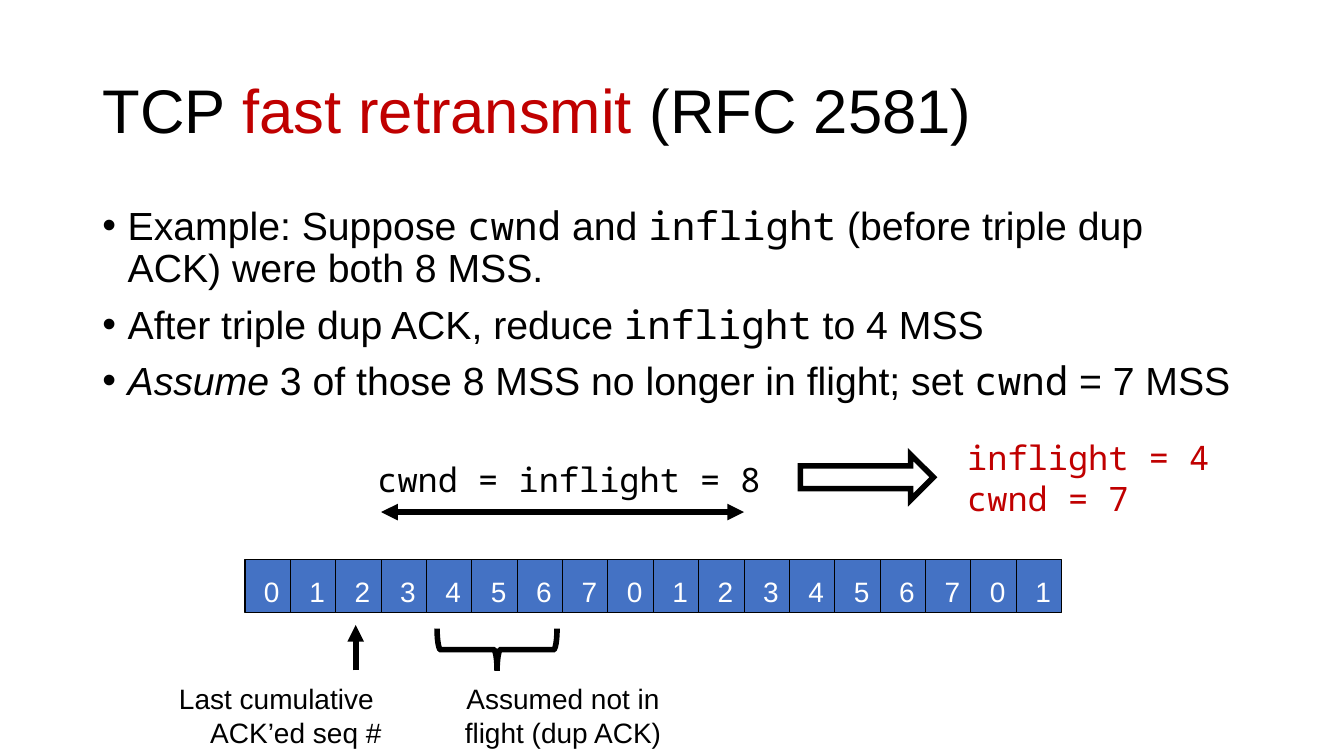
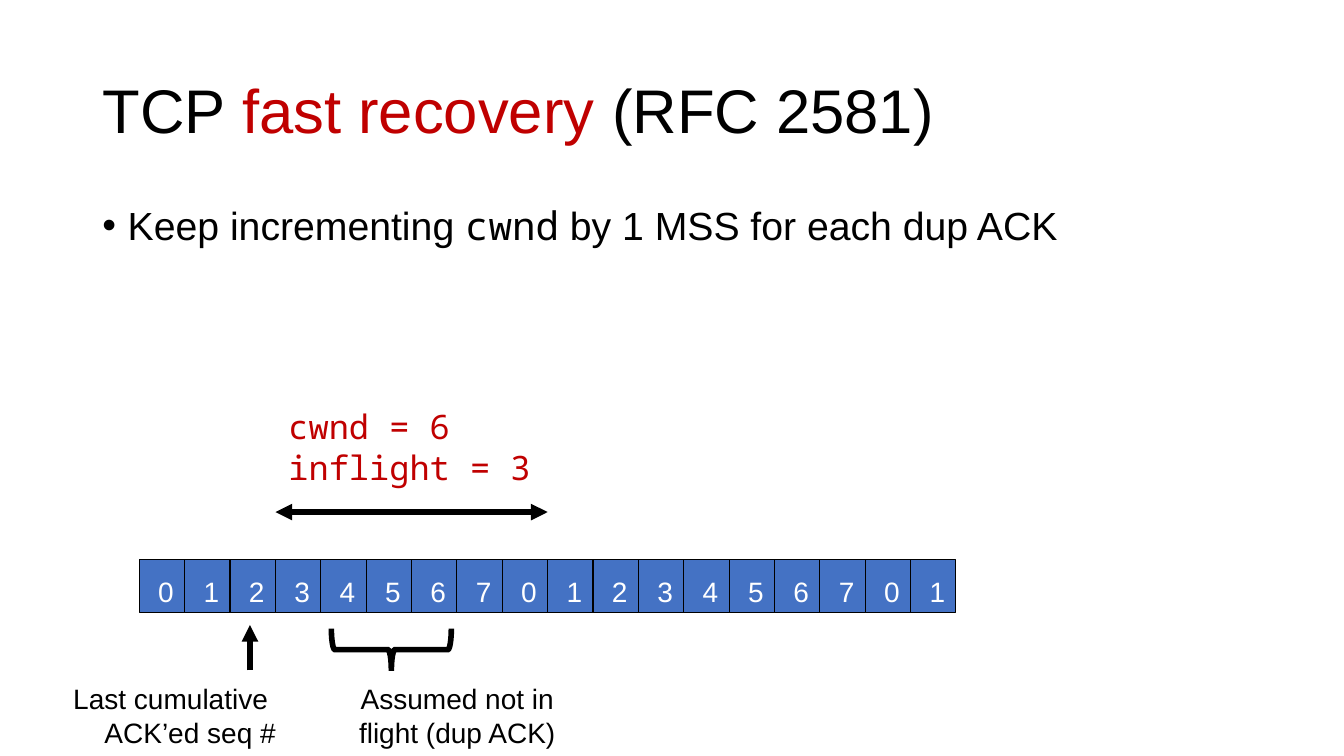
from lxml.etree import SubElement
from pptx import Presentation
from pptx.dml.color import RGBColor
from pptx.enum.shapes import MSO_CONNECTOR as Connector, MSO_SHAPE as Shape
from pptx.enum.text import MSO_ANCHOR as Anchor, PP_ALIGN as Align
from pptx.oxml.ns import qn
from pptx.util import Inches, Pt

colour = RGBColor.from_string
BLACK, WHITE, RED, BLUE = "000000", "FFFFFF", "C00000", "4472C4"
SANS, MONO = "Arial", "Noto Sans Mono"
CODE, ACCENT, STRESS = {"font": MONO}, {"color": RED}, {"italic": True}

deck = Presentation()
deck.slide_width, deck.slide_height = Inches(13.33), Inches(7.5)
COLUMN, ROW = Inches(0.45), deck.slide_height // 30


def place(*columns_and_rows):
    return [round(n * unit) for n, unit in zip(columns_and_rows, (COLUMN, ROW) * 2)]


def write(frame, paragraphs, size, font=SANS, color=BLACK, align=Align.LEFT):
    frame.word_wrap = True
    frame.text = "\n".join("" if isinstance(p, list) else p for p in paragraphs)
    for paragraph, content in zip(frame.paragraphs, paragraphs):
        paragraph.alignment = align
        styles = [{}]
        if isinstance(content, list):
            styles = [style for _, style in content]
            for words, _ in content:
                paragraph.add_run().text = words
        for run, style in zip(paragraph.runs, styles):
            run.font.size = Pt(size)
            run.font.name = style.get("font", font)
            run.font.italic = style.get("italic")
            run.font.color.rgb = colour(style.get("color", color))


lessons = [
    {
        "topic": "fast retransmit",
        "points": [
            [("Example: Suppose ", {}), ("cwnd", CODE), (" and ", {}), ("inflight", CODE),
             (" (before triple dup ACK) were both 8 MSS.", {})],
            [("After triple dup ACK, reduce ", {}), ("inflight", CODE), (" to 4 MSS", {})],
            [("Assume", STRESS), (" 3 of those 8 MSS no longer in flight; set ", {}),
             ("cwnd", CODE), (" = 7 MSS", {})],
        ],
        "first_column": 5.4,
        "window_end": 11,
        "states": [
            (2.7, 18, 10, 2, ["cwnd = inflight = 8"], BLACK),
            (15.7, 17.16, 6, 3.6, ["inflight = 4", "cwnd = 7"], RED),
        ],
        "transitions": [(12.24, 18.04, 2.93, 1.8)],
    },
    {
        "topic": "fast recovery",
        "points": [
            [("Keep incrementing ", {}), ("cwnd", CODE), (" by 1 MSS for each dup ACK", {})],
        ],
        "first_column": 3.07,
        "window_end": 9,
        "states": [(3.07, 15.92, 6, 3.6, ["cwnd = 6", "inflight = 3"], RED)],
        "transitions": [],
    },
]

captions = [
    (-2.27, 5.5, ["Last cumulative ", "ACK’ed seq #"], Align.RIGHT),
    (4.31, 5.4, ["Assumed not in flight (dup ACK)"], Align.CENTER),
]

for lesson in lessons:
    slide = deck.slides.add_slide(deck.slide_layouts[5])
    shapes = slide.shapes
    first = lesson["first_column"]

    title = shapes.title
    title.left, title.top, title.width, title.height = place(2.04, 1.6, 25.56, 5.8)
    title.text_frame.vertical_anchor = Anchor.MIDDLE
    write(title.text_frame, [[("TCP ", {}), (lesson["topic"], ACCENT), (" (RFC 2581)", {})]], 44)
    title.text_frame.paragraphs[0].line_spacing = 0.9

    points = shapes.add_textbox(*place(2.04, 8, 25.56, 9)).text_frame
    write(points, lesson["points"], 28)
    for point in points.paragraphs:
        point.line_spacing = 0.9
        point.space_before = Pt(10)
        properties = point._p.get_or_add_pPr()
        properties.set("marL", str(Inches(0.25)))
        properties.set("indent", str(-Inches(0.25)))
        SubElement(properties, qn("a:buFont"), typeface=SANS)
        SubElement(properties, qn("a:buChar"), char="•")

    for number in range(18):
        segment = shapes.add_shape(Shape.RECTANGLE, *place(first + number, 22.2, 1, 2.1))
        segment.shadow.inherit = False
        segment.fill.solid()
        segment.fill.fore_color.rgb = colour(BLUE)
        segment.line.color.rgb = colour(BLACK)
        segment.line.width = Pt(0.75)
        label = segment.text_frame
        label.margin_left, label.margin_top = Inches(0.08), Inches(0.1)
        label.margin_right = label.margin_bottom = 0
        write(label, [str(number % 8)], 20, color=WHITE, align=Align.CENTER)

    window = (3, 20.32, lesson["window_end"], 20.32, ("headEnd", "tailEnd"))
    last_ack = (2.44, 26.6, 2.44, 24.8, ("tailEnd",))
    for x1, y1, x2, y2, heads in (window, last_ack):
        arrow = shapes.add_connector(Connector.STRAIGHT, *place(first + x1, y1, first + x2, y2))
        arrow.line.color.rgb = colour(BLACK)
        arrow.line.width = Pt(4)
        stroke = arrow.element.spPr.find(qn("a:ln"))
        for head in heads:
            SubElement(stroke, qn(f"a:{head}"), type="triangle")
        SubElement(arrow.element.spPr, qn("a:effectLst"))

    outlines = [(Shape.RIGHT_BRACE, (5.09, 23.4, 0.93, 4.76), 90)]
    outlines += [(Shape.RIGHT_ARROW, area, 0) for area in lesson["transitions"]]
    for kind, (left, *rest), turn in outlines:
        outline = shapes.add_shape(kind, *place(first + left, *rest))
        outline.rotation = turn
        outline.shadow.inherit = False
        outline.fill.background()
        outline.line.color.rgb = colour(BLACK)
        outline.line.width = Pt(4)
        SubElement(outline.element.spPr.find(qn("a:ln")), qn("a:miter"), lim="800000")

    for left, width, words, align in captions:
        caption = shapes.add_textbox(*place(first + left, 26.85, width, 3.1))
        write(caption.text_frame, words, 20, align=align)

    for left, top, width, height, values, color in lesson["states"]:
        state = shapes.add_textbox(*place(first + left, top, width, height))
        write(state.text_frame, values, 24, MONO, color)

deck.save("out.pptx")
